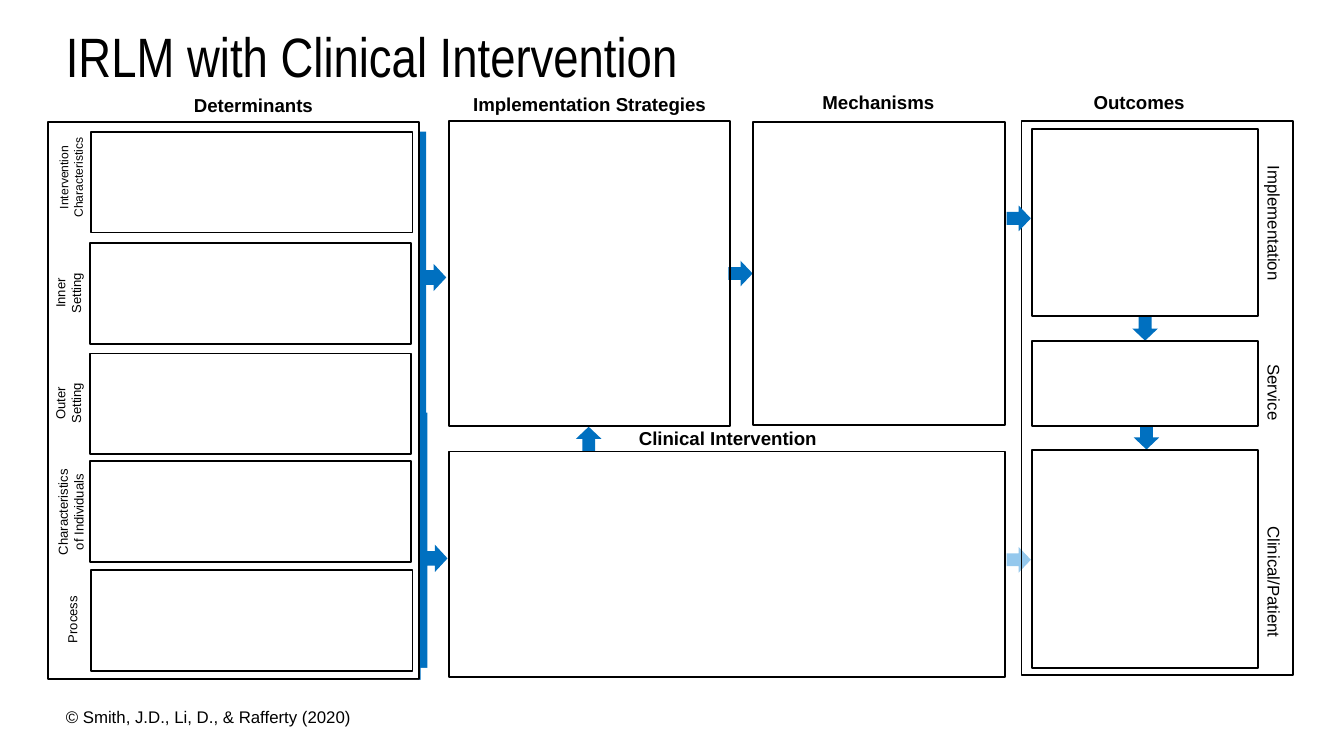
import pptx
import pptx.util
from pptx.dml.color import RGBColor
from pptx.enum.shapes import MSO_SHAPE
from pptx.enum.text import MSO_ANCHOR, PP_ALIGN
from pptx.util import Inches, Pt

BLACK = RGBColor(0, 0, 0)
WHITE = RGBColor(255, 255, 255)
BLUE = RGBColor(0x00, 0x70, 0xC0)
PALE_BLUE = RGBColor(0x94, 0xC8, 0xED)

TITLE = "IRLM with Clinical Intervention"
CREDIT = "© Smith, J.D., Li, D., & Rafferty (2020)"

HEADINGS = [
    ("Determinants", 0.95, 0.65, 1.87),
    ("Implementation Strategies", 3.39, 0.64, 1.99),
    ("Mechanisms", 5.6, 0.63, 1.87),
    ("Outcomes", 7.54, 0.63, 1.87),
    ("Clinical Intervention", 3.33, 3.13, 4.17),
]
DETERMINANTS = [
    ("Intervention\vCharacteristics", 6.5, 0.68, 0.98, 0.54, 1.32),
    ("Inner\vSetting", 7, 0.67, 1.81, 0.51, 2.18),
    ("Outer\vSetting", 7, 0.67, 2.63, 0.51, 3.0),
    ("Characteristics\vof Individuals", 7, 0.67, 3.43, 0.53, 3.81),
    ("Process", 7, 0.68, 4.24, 0.54, 4.61),
]
OUTCOMES = [
    ("Implementation", 0.96, 1.39, 1.66),
    ("Service", 2.54, 0.63, 2.92),
    ("Clinical/Patient", 3.35, 1.62, 4.33),
]
PANELS = [
    (3.34, 0.9, 2.09, 2.27),
    (5.6, 0.91, 1.88, 2.25),
    (3.34, 3.36, 4.14, 1.68),
]
ARROWS = [
    (8.43, 2.35, 90),
    (8.44, 3.16, 90),
    (4.29, 3.17, 270),
    (5.42, 1.94, 0),
    (7.49, 1.53, 0),
]
CALLOUTS = [(2.78, 3.07), (2.77, 0.98)]
CALLOUT_SHAPE = [0.198, 0.184, 0.171, 0.729]
MASKS = [(3.13, 4.97, 0.15, 0.13), (2.68, 5.06, 0.56, 0.34)]

deck = pptx.Presentation()
deck.slide_width = Inches(10)
deck.slide_height = deck.slide_width * 9 // 16
page = deck.slides.add_slide(deck.slide_layouts[6])


def add_shape(kind, place, fill=None, line=None, turn=0):
    shape = page.shapes.add_shape(kind, *map(Inches, place))
    shape.shadow.inherit = False
    shape.rotation = turn
    if fill is None:
        shape.fill.background()
    else:
        shape.fill.solid()
        shape.fill.fore_color.rgb = fill
    if line is None:
        shape.line.fill.background()
    else:
        shape.line.color.rgb = line
        shape.line.width = Pt(1)
    return shape


def add_frame(place, fill=None):
    return add_shape(MSO_SHAPE.RECTANGLE, place, fill, BLACK)


def add_arrow(left, top, turn, fill=BLUE):
    add_shape(MSO_SHAPE.RIGHT_ARROW, (left, top, 0.18, 0.19), fill, turn=turn)


def add_text(words, place, size, turn=0, bold=False, font="Arial", wrap=True,
             align=PP_ALIGN.CENTER, anchor=MSO_ANCHOR.TOP, spacing=1.0):
    box = page.shapes.add_textbox(*map(Inches, place))
    box.rotation = turn
    frame = box.text_frame
    frame_format = {
        "word_wrap": wrap, "vertical_anchor": anchor,
        "margin_left": Inches(0.08), "margin_right": Inches(0.08),
        "margin_top": Inches(0.05), "margin_bottom": Inches(0.05),
    }
    for name, value in frame_format.items():
        setattr(frame, name, value)
    para = frame.paragraphs[0]
    para.text = words
    para.alignment = align
    para.line_spacing = spacing
    for span in para.runs:
        for name, value in {"name": font, "size": Pt(size), "bold": bold}.items():
            setattr(span.font, name, value)
        span.font.color.rgb = BLACK


def add_side_label(words, center_x, center_y, length, depth, size, turn):
    place = (center_x - length / 2, center_y - depth / 2, length, depth)
    add_text(words, place, size, turn)


add_text(CREDIT, (0.41, 5.21, 2.34, 0.25), 9, align=PP_ALIGN.LEFT)
add_arrow(7.49, 4.07, 0, PALE_BLUE)
add_frame((7.6, 0.9, 2.02, 4.12))
for arrow in ARROWS:
    add_arrow(*arrow)
for left, top in CALLOUTS:
    callout = add_shape(MSO_SHAPE.RIGHT_ARROW_CALLOUT, (left, top, 0.55, 2.17), BLUE)
    for index, value in enumerate(CALLOUT_SHAPE):
        callout.adjustments[index] = value
add_frame((0.36, 0.91, 2.76, 4.14), WHITE)

for panel in PANELS:
    add_frame(panel)
for words, left, top, width in HEADINGS:
    add_text(words, (left, top, width, 0.27), 10, bold=True)
for words, size, left, top, label_x, label_y in DETERMINANTS:
    add_frame((left, top, 2.39, 0.75))
    depth = 0.34 if "\v" in words else 0.22
    add_side_label(words, label_x, label_y, 0.86, depth, size, 270)
for words, top, height, label_y in OUTCOMES:
    add_frame((7.68, top, 1.68, height))
    add_side_label(words, 9.48, label_y, 1.3, 0.25, 9, 90)
for mask in MASKS:
    add_shape(MSO_SHAPE.RECTANGLE, mask, WHITE)

add_text(TITLE, (0.41, 0.21, 8.62, 0.46), 29.7, font="Arial Narrow",
         align=PP_ALIGN.LEFT, anchor=MSO_ANCHOR.MIDDLE, spacing=0.9)

deck.save("out.pptx")
